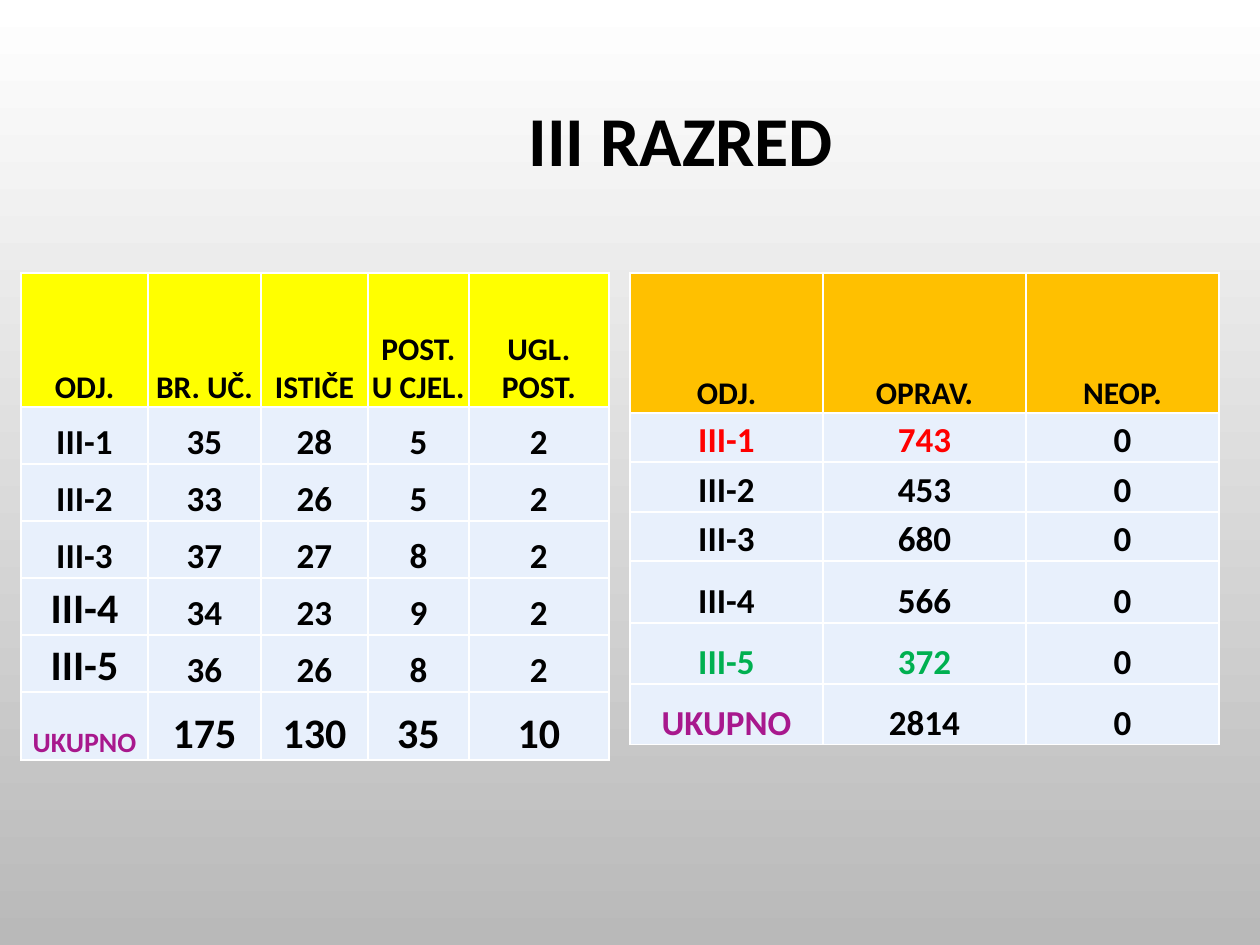
from dataclasses import dataclass, field

from pptx import Presentation
from pptx.dml.color import RGBColor as RGB
from pptx.enum.text import MSO_ANCHOR as Anchor, MSO_AUTO_SIZE as Fit, PP_ALIGN as Align
from pptx.oxml import parse_xml
from pptx.oxml.ns import nsdecls
from pptx.util import Pt

PX = 914400 / 126  # EMU in one px

BLACK = RGB(0x00, 0x00, 0x00)
WHITE = RGB(0xFF, 0xFF, 0xFF)
GREY = RGB(0xB9, 0xB9, 0xB9)
YELLOW = RGB(0xFF, 0xFF, 0x00)
ORANGE = RGB(0xFF, 0xC0, 0x00)
PALE = RGB(0xE8, 0xF0, 0xFC)
RED = RGB(0xFF, 0x00, 0x00)
GREEN = RGB(0x00, 0xB0, 0x50)
PURPLE = RGB(0xA8, 0x18, 0x8D)


@dataclass
class Grid:
    """A table; sizes and inks hold exceptions by (row, column)."""
    left: int
    top: int
    cols: list[int]
    rows: list[int]
    head: RGB
    data: list[list[str]]
    sizes: dict[tuple[int, int], int] = field(default_factory=dict)
    inks: dict[tuple[int, int], RGB] = field(default_factory=dict)


PUPILS = Grid(
    21, 273, [127, 113, 107, 101, 140], [134] + [57] * 5 + [68], YELLOW,
    [["ODJ.", "BR. UČ.", "ISTIČE", "POST. U CJEL.", "UGL. POST."],
     ["III-1", "35", "28", "5", "2"],
     ["III-2", "33", "26", "5", "2"],
     ["III-3", "37", "27", "8", "2"],
     ["III-4", "34", "23", "9", "2"],
     ["III-5", "36", "26", "8", "2"],
     ["UKUPNO", "175", "130", "35", "10"]],
    sizes={(4, 0): 24, (5, 0): 24, (6, 0): 16} | {(6, c): 24 for c in range(1, 5)},
    inks={(6, 0): PURPLE},
)
ABSENCE = Grid(
    630, 273, [193, 203, 193], [140, 49, 50, 49, 62, 61, 61], ORANGE,
    [["ODJ.", "OPRAV.", "NEOP."],
     ["III-1", "743", "0"],
     ["III-2", "453", "0"],
     ["III-3", "680", "0"],
     ["III-4", "566", "0"],
     ["III-5", "372", "0"],
     ["UKUPNO", "2814", "0"]],
    inks={(1, 0): RED, (1, 1): RED, (5, 0): GREEN, (5, 1): GREEN, (6, 0): PURPLE},
)


def emu(px: int) -> int:
    return round(px * PX)


def put(obj, **vals) -> None:
    for name, val in vals.items():
        setattr(obj, name, val)


def style(para, size: int, ink: RGB) -> None:
    para.alignment = Align.CENTER
    for run in para.runs:
        put(run.font, name="Calibri", size=Pt(size), bold=True)
        run.font.color.rgb = ink


def edge(cell) -> None:
    """Give a cell a thin white line on all sides."""
    props = cell._tc.get_or_add_tcPr()
    for i, side in enumerate(("lnL", "lnR", "lnT", "lnB")):
        props.insert(i, parse_xml(
            f'<a:{side} {nsdecls("a")} w="{Pt(1)}"><a:solidFill>'
            f'<a:srgbClr val="{WHITE}"/></a:solidFill></a:{side}>'))


def draw(slide, grid: Grid) -> None:
    box = [emu(v) for v in (grid.left, grid.top, sum(grid.cols), sum(grid.rows))]
    table = slide.shapes.add_table(len(grid.rows), len(grid.cols), *box).table
    put(table, first_row=False, horz_banding=False)
    for col, wide in zip(table.columns, grid.cols):
        col.width = emu(wide)
    for r, (row, tall) in enumerate(zip(table.rows, grid.rows)):
        row.height = emu(tall)
        for c, cell in enumerate(row.cells):
            put(cell, text=grid.data[r][c], vertical_anchor=Anchor.BOTTOM,
                margin_left=emu(1), margin_right=emu(1),
                margin_top=emu(1), margin_bottom=0)
            cell.fill.solid()
            cell.fill.fore_color.rgb = PALE if r else grid.head
            edge(cell)
            size = grid.sizes.get((r, c), 20 if r else 18)
            style(cell.text_frame.paragraphs[0], size, grid.inks.get((r, c), BLACK))


def main() -> None:
    prs = Presentation()
    put(prs, slide_width=emu(1260), slide_height=emu(945))
    slide = prs.slides.add_slide(prs.slide_layouts[5])

    # Background: white at the top to grey at the bottom
    fill = slide.background.fill
    fill.gradient()
    fill.gradient_angle = 270
    for stop, tone, pos in zip(fill.gradient_stops, (WHITE, GREY), (0, 1)):
        stop.color.rgb = tone
        stop.position = pos

    # Tables
    for grid in (PUPILS, ABSENCE):
        draw(slide, grid)

    # Title
    title = slide.shapes.title
    put(title, left=emu(472), top=emu(84), width=emu(418), height=emu(103))
    frame = title.text_frame
    put(frame, text="III RAZRED", word_wrap=True,
        auto_size=Fit.SHAPE_TO_FIT_TEXT, vertical_anchor=Anchor.TOP)
    para = frame.paragraphs[0]
    put(para, line_spacing=1.07, space_after=Pt(8))
    style(para, 40, BLACK)

    prs.save("out.pptx")


if __name__ == "__main__":
    main()
